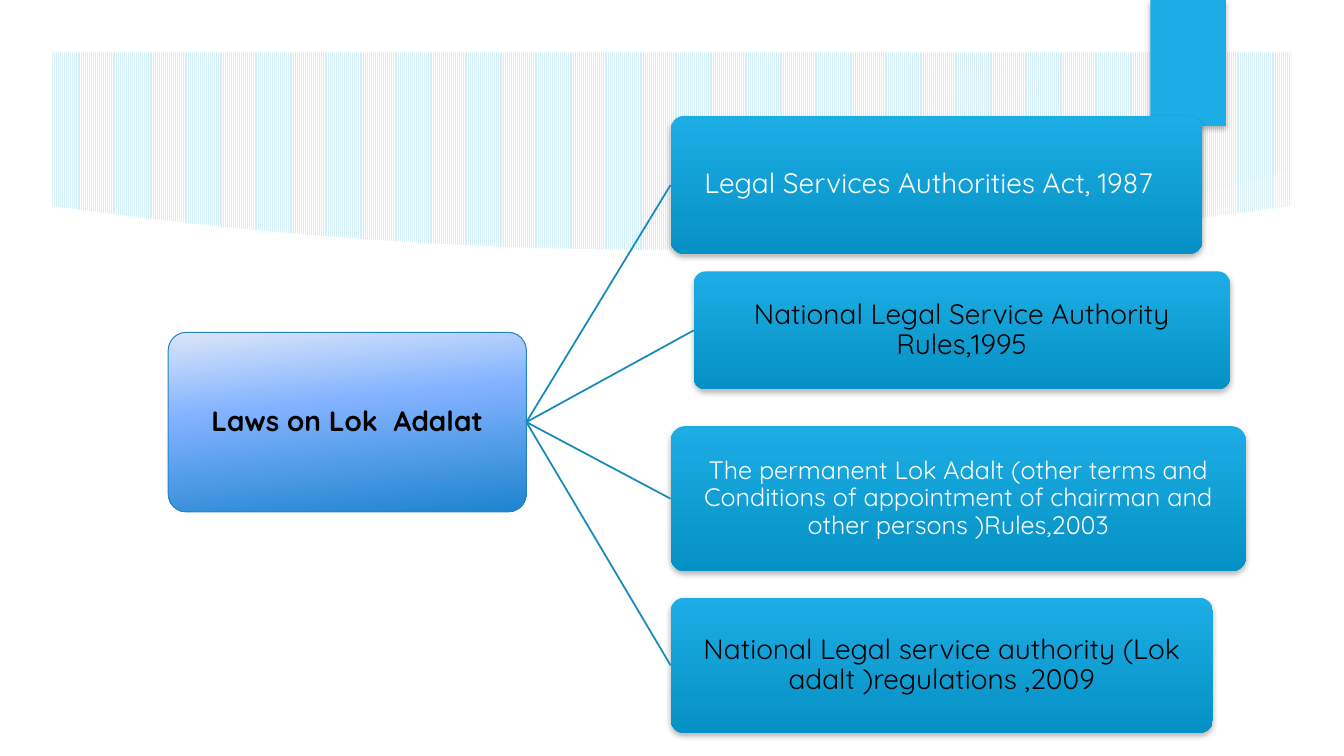
import pptx
import pptx.dml.color
import pptx.enum.dml
import pptx.enum.shapes
import pptx.enum.text
import pptx.oxml
import pptx.oxml.ns
import pptx.util

Pt = pptx.util.Pt
SHAPE = pptx.enum.shapes.MSO_SHAPE
NS = pptx.oxml.ns.nsdecls("a")
qn = pptx.oxml.ns.qn


def rgb(value):
    return pptx.dml.color.RGBColor.from_string(value)


class Deck:
    font = "Quicksand"
    white = "FFFFFF"
    accent = "1CADE4"
    link = "168BB7"

    def __init__(self, width, height):
        self.prs = pptx.Presentation()
        self.prs.slide_width, self.prs.slide_height = Pt(width), Pt(height)
        self.slide = self.prs.slides.add_slide(self.prs.slide_layouts[6])

    def background(self, fore, back):
        fill = self.slide.background.fill
        fill.patterned()
        fill.pattern = pptx.enum.dml.MSO_PATTERN.LIGHT_VERTICAL
        fill.fore_color.rgb, fill.back_color.rgb = rgb(fore), rgb(back)

    def paint(self, sp, color, alpha=100):
        sp.shadow.inherit = False
        sp.line.fill.background()
        sp.fill.solid()
        sp.fill.fore_color.rgb = rgb(color)
        if alpha < 100:
            clr = sp._element.spPr.find(".//" + qn("a:srgbClr"))
            clr.append(pptx.oxml.parse_xml(f'<a:alpha {NS} val="{alpha * 1000}"/>'))
        return sp

    def shape(self, kind, box, color):
        sp = self.slide.shapes.add_shape(kind, *map(Pt, box))
        return self.paint(sp, color)

    def freeform(self, points, color, alpha=100):
        first, *rest = [(Pt(x), Pt(y)) for x, y in points]
        builder = self.slide.shapes.build_freeform(*first, scale=1.0)
        builder.add_line_segments(rest, close=True)
        return self.paint(builder.convert_to_shape(), color, alpha)

    def gradient(self, sp, stops, angle=None):
        """Stops are (position, colour, opacity); no angle means radial."""
        gs = "".join(
            f'<a:gs pos="{pos * 1000}"><a:srgbClr val="{color}">'
            f'<a:alpha val="{alpha * 1000}"/></a:srgbClr></a:gs>'
            for pos, color, alpha in stops)
        if angle is None:
            way = ('<a:path path="circle"><a:fillToRect l="50000" t="50000" '
                   'r="50000" b="50000"/></a:path>')
        else:
            way = f'<a:lin ang="{angle * 60000}" scaled="0"/>'
        xml = f'<a:gradFill {NS} rotWithShape="1"><a:gsLst>{gs}</a:gsLst>{way}</a:gradFill>'
        spPr = sp._element.spPr
        spPr.replace(spPr.find(qn("a:solidFill")), pptx.oxml.parse_xml(xml))

    def shadow(self, sp):
        sp._element.spPr.find(qn("a:effectLst")).append(pptx.oxml.parse_xml(
            f'<a:outerShdw {NS} blurRad="{Pt(4)}" dist="{Pt(2)}" dir="5400000" '
            'rotWithShape="0"><a:srgbClr val="000000"><a:alpha val="28000"/>'
            '</a:srgbClr></a:outerShdw>'))

    def card(self, box, text, stops, angle, color, size=20, bold=False, right=1):
        sp = self.shape(SHAPE.ROUNDED_RECTANGLE, box, self.accent)
        sp.adjustments[0] = 0.1
        self.gradient(sp, stops, angle)
        tf = sp.text_frame
        tf.word_wrap = True
        tf.vertical_anchor = pptx.enum.text.MSO_ANCHOR.MIDDLE
        tf.margin_left = tf.margin_top = tf.margin_bottom = Pt(1)
        tf.margin_right = Pt(right)
        p = tf.paragraphs[0]
        p.text = text
        p.alignment = pptx.enum.text.PP_ALIGN.CENTER
        p.line_spacing = 0.9
        p.font.name, p.font.size, p.font.bold = self.font, Pt(size), bold
        p.font.color.rgb = rgb(color)
        return sp

    def connect(self, start, end):
        cx = self.slide.shapes.add_connector(
            pptx.enum.shapes.MSO_CONNECTOR.STRAIGHT, 0, 0, 0, 0)
        cx.begin_connect(start, 3)
        cx.end_connect(end, 1)
        cx.line.color.rgb, cx.line.width = rgb(self.link), Pt(1.25)
        cx._element.spPr.append(pptx.oxml.parse_xml(f"<a:effectLst {NS}/>"))


def main():
    deck = Deck(960, 540)

    # Striped band with soft glows
    deck.background("D2EFFA", "FFFFFF")
    for box, inner, middle, edge in [((677.5, 131.8, 221.8, 221.8), 7, 6, 69),
                                     ((630, 0, 126, 126), 14, 7, 73)]:
        glow = deck.shape(SHAPE.OVAL, box, "F2F4F5")
        deck.gradient(glow, [(0, "F2F4F5", inner), (36, "F2F4F5", middle),
                             (edge, "F2F4F5", 0)])

    # Pale wedge at the right of the band
    deck.freeform([(672.5, 180), (750, 176), (840, 165), (928, 154), (923.8, 119.5),
                   (873, 135.4), (823.7, 148.3), (774, 158.8), (726, 167),
                   (669.6, 175)], deck.white, 20)

    # White page below the curved edge
    left, right, edge_y, depth, steps = 36, 924.5, 146.9, 31.7, 40
    curve = []
    for i in range(steps + 1):
        t = i / steps
        curve.append((left + (right - left) * t, edge_y + depth * 4 * t * (1 - t)))
    deck.freeform(curve + [(right, 504), (left, 504)], deck.white)

    # White border and corner tab
    border = deck.shape(SHAPE.FRAME, (0, 0, 960, 540), deck.white)
    border.adjustments[0] = 37.5 / 540
    deck.shadow(deck.shape(SHAPE.RECTANGLE, (821.7, 0, 54, 90), deck.accent))

    # Root topic
    root = deck.card((120.2, 237.4, 255.8, 128.2), "Laws on Lok  Adalat",
                     [(0, "DAE6F9", 100), (40, "82B2FF", 100), (100, "1E84CE", 100)],
                     84, "000000", bold=True)
    root.line.color.rgb, root.line.width = rgb("2683C6"), Pt(0.75)

    # Laws, each joined to the root
    laws = [
        ((479, 82.8, 380, 98.6), "Legal Services Authorities Act, 1987",
         deck.white, 20, 12),
        ((495.5, 193.9, 383, 84.2), "National Legal Service Authority Rules,1995",
         "000000", 20, 1),
        ((479, 304.4, 411, 103.7),
         "The permanent Lok Adalt (other terms and Conditions of appointment of "
         "chairman and other persons )Rules,2003", deck.white, 18, 1),
        ((479, 427, 387.4, 96.5),
         "National Legal service authority (Lok adalt )regulations ,2009",
         "000000", 20, 1),
    ]
    for box, text, color, size, margin in laws:
        law = deck.card(box, text, [(0, deck.accent, 100), (100, "0691C5", 100)],
                        90, color, size, right=margin)
        deck.shadow(law)
        deck.connect(root, law)

    deck.prs.save("out.pptx")


if __name__ == "__main__":
    main()
